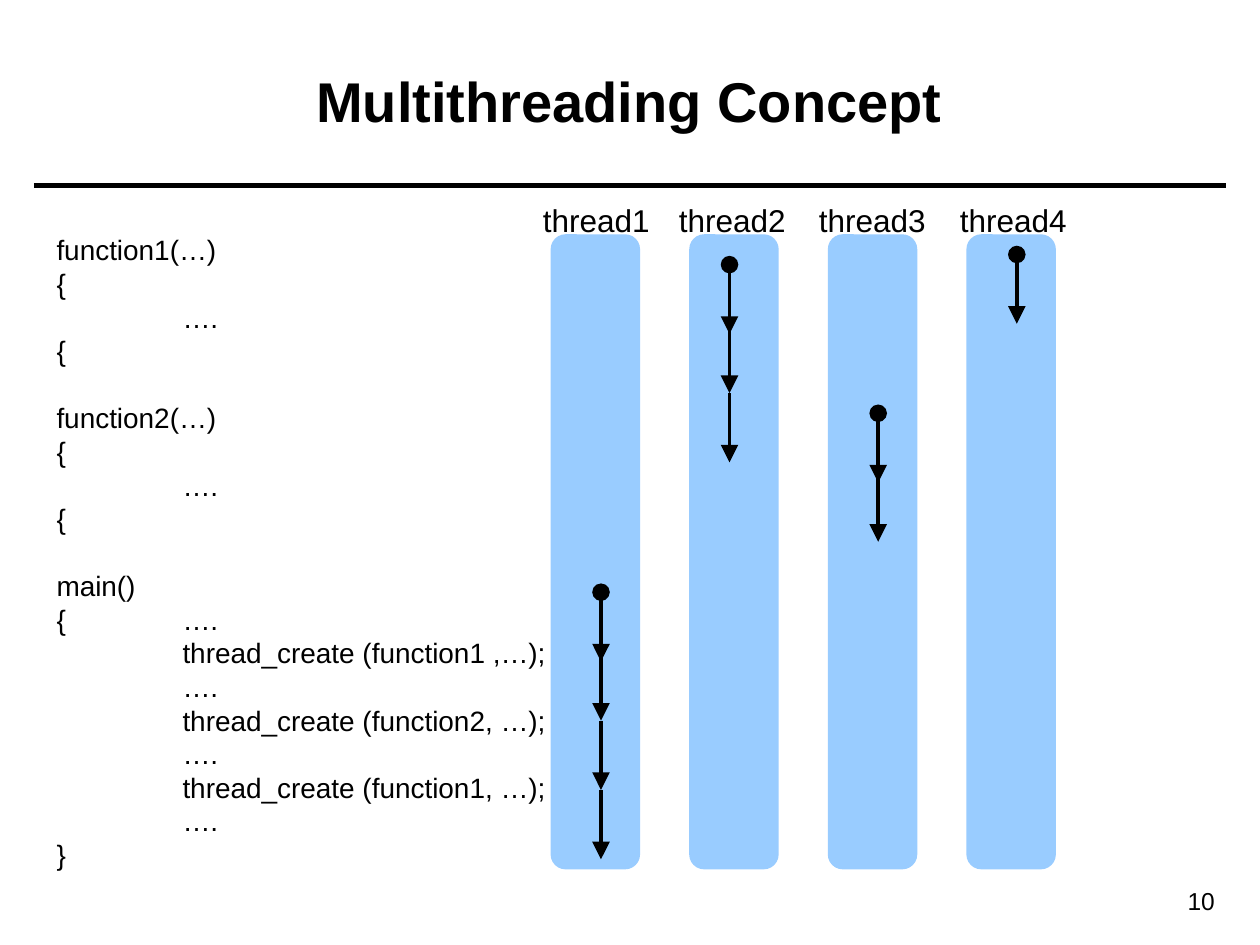
import pptx
import pptx.util
import pptx.dml.color
import pptx.enum.shapes
import pptx.enum.text
import pptx.oxml.ns
import lxml.etree

Inches, Pt = pptx.util.Inches, pptx.util.Pt
qn = pptx.oxml.ns.qn
ALIGN = pptx.enum.text.PP_ALIGN
ANCHOR = pptx.enum.text.MSO_ANCHOR
BLACK = pptx.dml.color.RGBColor(0x00, 0x00, 0x00)
LANE_BLUE = pptx.dml.color.RGBColor(0x99, 0xCC, 0xFF)

CODE_LEADING = Pt(19.2)
CODE_INDENT = Inches(1)
FUNCTIONS = [
    ["function1(…)", "{", "\t….", "{"],
    ["function2(…)", "{", "\t….", "{"],
    ["main()", "{\t….", "\tthread_create (function1 ,…);", "\t….",
     "\tthread_create (function2, …);", "\t….",
     "\tthread_create (function1, …);", "\t….", "}"],
]

# Name, label left, arrow x, first arrow top, number of arrows
THREADS = [
    ("thread1", 4.21, 4.77, 4.70, 4),
    ("thread2", 5.29, 5.79, 2.10, 3),
    ("thread3", 6.40, 6.97, 3.28, 2),
    ("thread4", 7.52, 8.07, 2.02, 1),
]
ARROW_LENGTH = 0.55
FIRST_OVERLAP = 0.08


def add_frame(slide, left, top, width, height, wrap=True, anchor=ANCHOR.TOP):
    box = slide.shapes.add_textbox(Inches(left), Inches(top), Inches(width), Inches(height))
    box.text_frame.word_wrap = wrap
    box.text_frame.vertical_anchor = anchor
    return box.text_frame


def add_run(paragraph, text, size, bold=False, align=ALIGN.LEFT):
    paragraph.alignment = align
    run = paragraph.add_run()
    run.text = text
    run.font.name = "Arial"
    run.font.size = Pt(size)
    run.font.bold = bold
    run.font.color.rgb = BLACK


def add_line(slide, start, end, weight, head=None, tail=None):
    line = slide.shapes.add_connector(
        pptx.enum.shapes.MSO_CONNECTOR.STRAIGHT, *map(Inches, start + end))
    line.line.color.rgb = BLACK
    line.line.width = Pt(weight)
    outline = line.line._get_or_add_ln()
    for tag, kind in (("a:headEnd", head), ("a:tailEnd", tail)):
        if kind:
            lxml.etree.SubElement(outline, qn(tag), type=kind, w="lg", len="lg")
    lxml.etree.SubElement(line._element.spPr, qn("a:effectLst"))


def add_header(slide, left, top, width, height):
    title = add_frame(slide, left, top, width, height, anchor=ANCHOR.MIDDLE)
    add_run(title.paragraphs[0], "Multithreading Concept", 32, True, ALIGN.CENTER)
    add_line(slide, (0.27, 1.47), (9.73, 1.47), 3)


def add_code(slide, left, top, width, height):
    code = add_frame(slide, left, top, width, height)
    paragraph = code.paragraphs[0]
    for number, function in enumerate(FUNCTIONS):
        for row, text in enumerate(function):
            if number or row:
                paragraph = code.add_paragraph()
            paragraph.line_spacing = CODE_LEADING
            # One line of space separates the functions
            if number and not row:
                paragraph.space_before = CODE_LEADING
            tabs = lxml.etree.SubElement(
                paragraph._p.get_or_add_pPr(), qn("a:tabLst"))
            lxml.etree.SubElement(tabs, qn("a:tab"), pos=str(CODE_INDENT), algn="l")
            add_run(paragraph, text, 16)


def add_thread(slide, left, top, width, height, thread):
    name, label_left, x, start, count = thread
    lane = slide.shapes.add_shape(
        pptx.enum.shapes.MSO_SHAPE.ROUNDED_RECTANGLE,
        Inches(left), Inches(top), Inches(width), Inches(height))
    lane.shadow.inherit = False
    lane.fill.solid()
    lane.fill.fore_color.rgb = LANE_BLUE
    lane.line.fill.background()

    # Execution steps: the second one begins just inside the first
    for step in range(count):
        y = start + step * ARROW_LENGTH - (FIRST_OVERLAP if step else 0)
        add_line(slide, (x, y), (x, y + ARROW_LENGTH), 2,
                 head=None if step else "oval", tail="triangle")

    label = add_frame(slide, label_left, top - 0.31, 1.05, 0.4, wrap=False)
    add_run(label.paragraphs[0], name, 18)


def add_page_number(slide, left, top, width, height):
    number = add_frame(slide, left, top, width, height)
    add_run(number.paragraphs[0], "10", 14, align=ALIGN.RIGHT)


def main():
    deck = pptx.Presentation()
    deck.slide_width, deck.slide_height = Inches(10), Inches(7.5)
    slide = deck.slides.add_slide(deck.slide_layouts[6])
    add_header(slide, 0.35, 0.17, 9.29, 1.25)
    for index, thread in enumerate(THREADS):
        add_thread(slide, 4.37 + 1.1 * index, 1.86, 0.71, 5.04, thread)
    add_code(slide, 0.35, 1.8, 4.52, 5.18)
    add_page_number(slide, 8.7, 6.98, 1.04, 0.34)
    deck.save("out.pptx")


if __name__ == "__main__":
    main()
